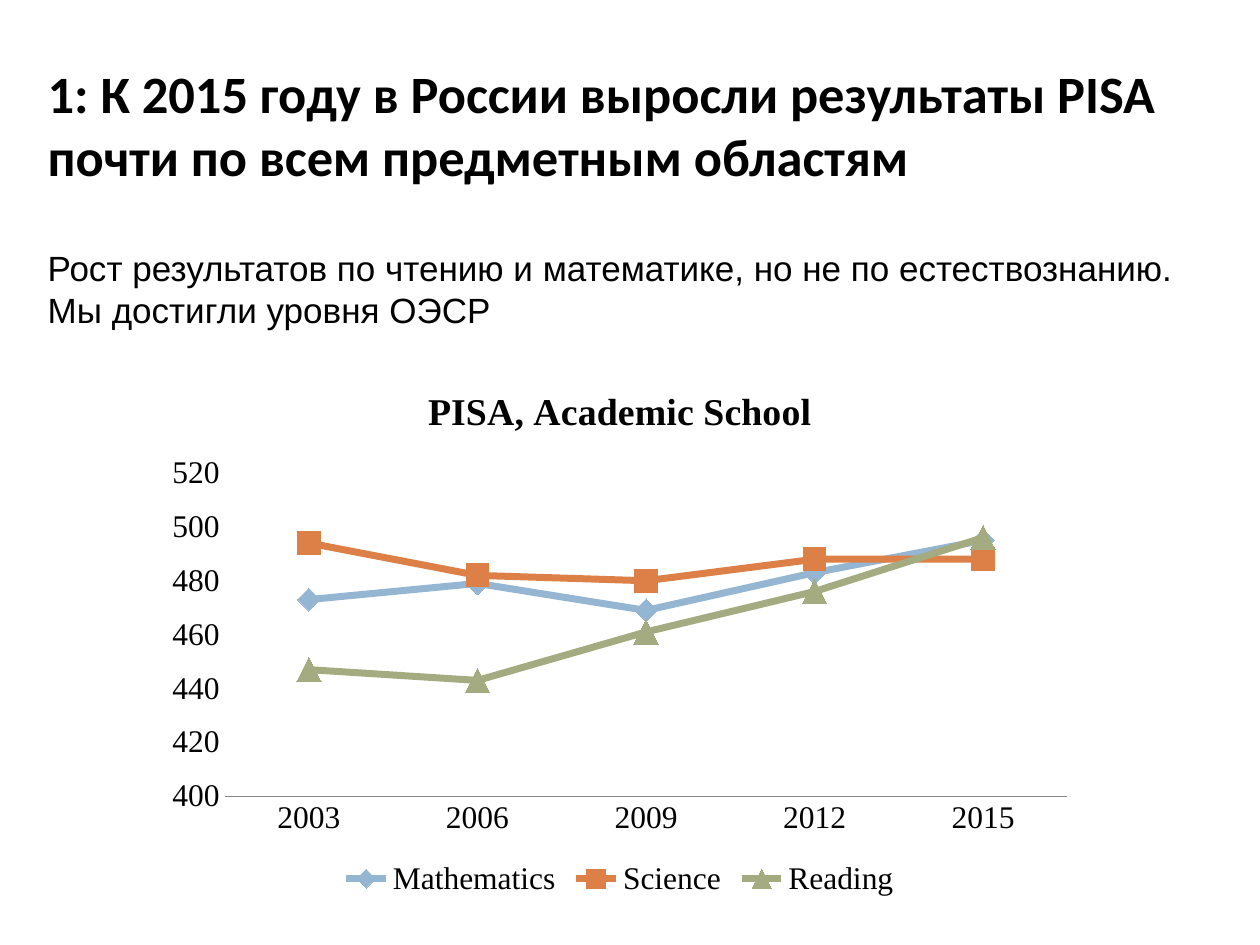
from pptx import Presentation, util as u
from pptx.chart.data import CategoryChartData
from pptx.dml.color import RGBColor
from pptx.enum import chart as ch, text

COLORS = {"ink": "000000", "axis": "878787", "Mathematics": "94B6D2",
          "Science": "DD8047", "Reading": "A5AB81"}
YEARS = ["2003", "2006", "2009", "2012", "2015"]
MARKER = ch.XL_MARKER_STYLE
SUBJECTS = [
    ("Mathematics", (473, 479, 469, 483, 495), MARKER.DIAMOND, 13),
    ("Science", (494, 482, 480, 488, 488), MARKER.SQUARE, 13),
    ("Reading", (447, 443, 461, 476, 496), MARKER.TRIANGLE, 14),
]


def rgb(name):
    return RGBColor.from_string(COLORS[name])


def style(font, face, size, bold=False):
    font.name, font.size, font.bold = face, u.Pt(size), bold
    font.color.rgb = rgb("ink")


deck = Presentation()
deck.slide_width, deck.slide_height = u.Inches(10), u.Inches(7.5)
slide = deck.slides.add_slide(deck.slide_layouts[6])
left, width = u.Inches(0.28), u.Inches(9.61)

for top, height, anchor, face, size, bold, words in [
    (0.36, 1.25, text.MSO_ANCHOR.MIDDLE, "Calibri", 30, True,
     "1: К 2015 году в России выросли результаты PISA почти по всем предметным областям"),
    (1.91, 0.77, text.MSO_ANCHOR.TOP, "Arial", 20, False,
     "Рост результатов по чтению и математике, но не по естествознанию. Мы достигли уровня ОЭСР"),
]:
    frame = slide.shapes.add_textbox(left, u.Inches(top), width, u.Inches(height)).text_frame
    frame.word_wrap = True
    frame.vertical_anchor = anchor
    paragraph = frame.paragraphs[0]
    paragraph.text = words
    style(paragraph.font, face, size, bold)

scores = CategoryChartData()
scores.categories = YEARS
for subject, values, *_ in SUBJECTS:
    scores.add_series(subject, values)
trend = slide.shapes.add_chart(
    ch.XL_CHART_TYPE.LINE_MARKERS, u.Inches(1.22), u.Inches(2.88),
    u.Inches(7.4), u.Inches(4.28), scores).chart
style(trend.font, "Times New Roman", 18)

trend.has_title = True
heading = trend.chart_title.text_frame.paragraphs[0]
heading.text = "PISA, Academic School"
style(heading.font, "Times New Roman", 21.6, True)
trend.chart_title.include_in_layout = False

trend.has_legend = True
trend.legend.position = ch.XL_LEGEND_POSITION.BOTTOM
trend.legend.include_in_layout = False

year_axis, score_axis = trend.category_axis, trend.value_axis
for axis in (year_axis, score_axis):
    axis.major_tick_mark = axis.minor_tick_mark = ch.XL_TICK_MARK.NONE
    axis.has_major_gridlines = False
year_axis.format.line.color.rgb = rgb("axis")
year_axis.format.line.width = u.Pt(0.75)
score_axis.format.line.fill.background()
score_axis.minimum_scale, score_axis.maximum_scale = 400, 520
score_axis.major_unit = 20

trend.plots[0].vary_by_categories = False
for line, (subject, _, symbol, size) in zip(trend.plots[0].series, SUBJECTS):
    line.smooth = False
    line.format.line.color.rgb = rgb(subject)
    line.format.line.width = u.Pt(4)
    line.marker.style, line.marker.size = symbol, size
    line.marker.format.fill.solid()
    line.marker.format.fill.fore_color.rgb = rgb(subject)
    line.marker.format.line.color.rgb = rgb(subject)

deck.save("out.pptx")
